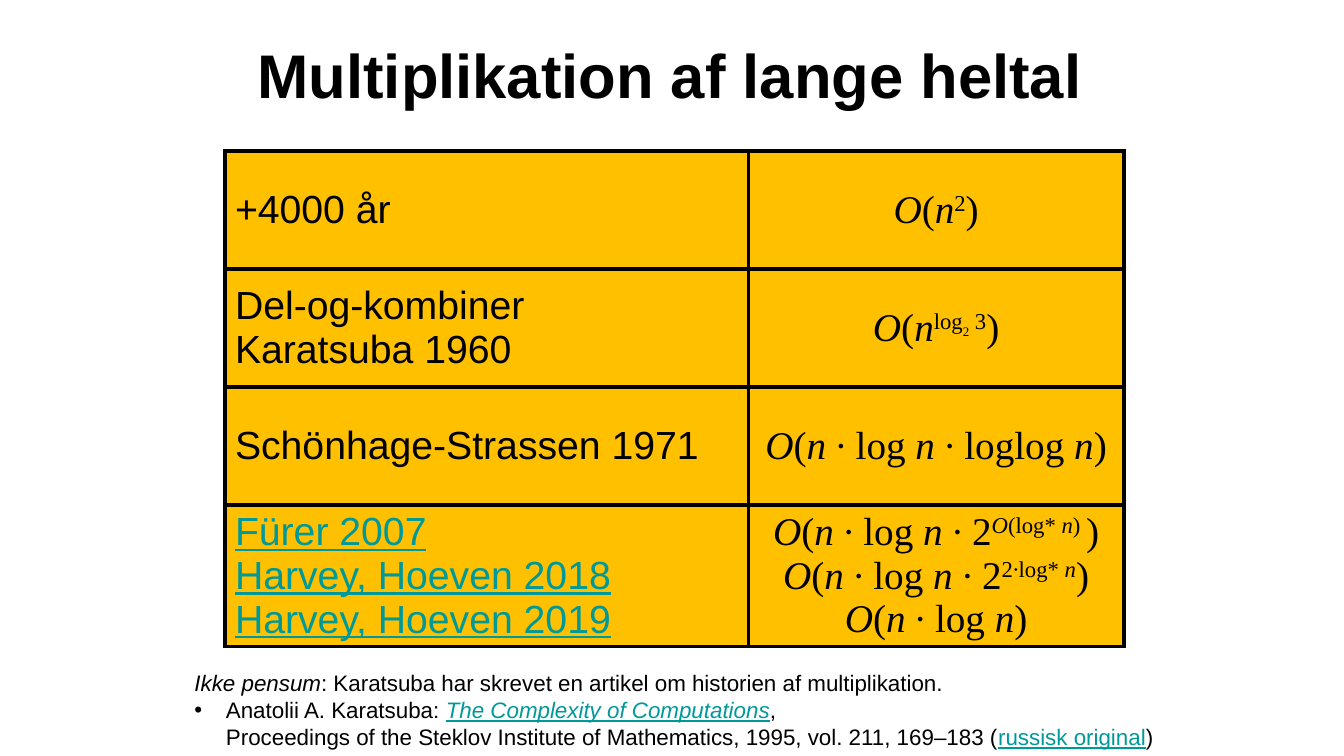
from pptx import Presentation, util as u
from pptx.dml.color import RGBColor
from pptx.enum import text
from pptx.oxml import parse_xml
from pptx.oxml.ns import nsdecls

# Runs are (text, style): i italic, ^ raised, _ small index, u link look, m formula font
TITLE = "Multiplikation af lange heltal"
N_LOG_N = [("O", "mi"), ("(", "m"), ("n ", "mi"), ("∙ log ", "m")]
N_LOG_N_2 = N_LOG_N + [("n ", "mi"), ("∙ 2", "m")]
O_N = [("O", "mi"), ("(", "m"), ("n", "mi")]
END = [(")", "m")]

# Each cell is a list of paragraphs
ROWS = [
    ([[("+4000 år", "")]],
     [O_N + [("2", "m^")] + END]),
    ([[("Del-og-kombiner \nKaratsuba 1960", "")]],
     [O_N + [("log", "m^"), ("2", "m_"), (" 3", "m^")] + END]),
    ([[("Schönhage-Strassen 1971", "")]],
     [N_LOG_N + [("n ", "mi"), ("∙ loglog ", "m"), ("n", "mi")] + END]),
    ([[("Fürer 2007\nHarvey, Hoeven 2018", "u")], [("Harvey, Hoeven 2019", "u")]],
     [N_LOG_N_2 + [("O", "mi^"), ("(log* ", "m^"), ("n", "mi^"), (") ", "m^")] + END,
      N_LOG_N_2 + [("2∙log* ", "m^"), ("n", "mi^")] + END,
      N_LOG_N + [("n", "mi")] + END]),
]
NOTE = [("Ikke pensum", "i"),
        (": Karatsuba har skrevet en artikel om historien af multiplikation.", "")]
REFERENCE = [
    ("Anatolii A. Karatsuba: ", ""), ("The Complexity of Computations", "iu"),
    (", \nProceedings of the Steklov Institute of Mathematics, 1995, vol. 211, 169–183 (", ""),
    ("russisk original", "u"), (")", "")]

THEME = dict(font="Arial", formula="Times New Roman", ink="000000", link="009999",
             cell="FFC000", title=44, body=28, index=16, note=16, border=3)
COL_WIDTHS = (374, 268)
ROW_HEIGHTS = (84.25, 84.25, 84.25, 101)
LEFT, CENTER = text.PP_ALIGN.LEFT, text.PP_ALIGN.CENTER


def write(p, runs, size, align=LEFT, bold=False):
    p.alignment = align
    for words, style in runs:
        for i, line in enumerate(words.split("\n")):
            if i:
                p.add_line_break()
            r = p.add_run()
            r.text = line
            f = r.font
            f.name = THEME["formula" if "m" in style else "font"]
            f.size = u.Pt(THEME["index"] if "_" in style else size)
            f.bold, f.italic, f.underline = bold, "i" in style, "u" in style
            f.color.rgb = RGBColor.from_string(THEME["link" if "u" in style else "ink"])
            if "^" in style or "_" in style:
                f._element.set("baseline", "30000" if "^" in style else "20000")


def write_all(tf, paragraphs, size, align=LEFT):
    for i, runs in enumerate(paragraphs):
        write(tf.add_paragraph() if i else tf.paragraphs[0], runs, size, align)


def add_borders(cell):
    tcPr = cell._tc.get_or_add_tcPr()
    for i, side in enumerate("LRTB"):
        tcPr.insert(i, parse_xml(
            f'<a:ln{side} {nsdecls("a")} w="{u.Pt(THEME["border"])}"><a:solidFill>'
            f'<a:srgbClr val="{THEME["ink"]}"/></a:solidFill></a:ln{side}>'))


def add_bullet(p, indent):
    pPr = p._p.get_or_add_pPr()
    pPr.set("marL", str(u.Pt(indent)))
    pPr.set("indent", str(-u.Pt(indent)))
    pPr.append(parse_xml(f'<a:buFont {nsdecls("a")} typeface="{THEME["font"]}"/>'))
    pPr.append(parse_xml(f'<a:buChar {nsdecls("a")} char="•"/>'))


def add_title(s):
    sp = s.shapes.title
    sp.left, sp.top, sp.width, sp.height = map(u.Pt, (154.8, 8, 648, 90))
    sp.text_frame.vertical_anchor = text.MSO_ANCHOR.MIDDLE
    write(sp.text_frame.paragraphs[0], [(TITLE, "")], THEME["title"], CENTER, bold=True)


def add_runtimes(s):
    tbl = s.shapes.add_table(len(ROWS), len(COL_WIDTHS), u.Pt(160.7), u.Pt(108),
                             u.Pt(sum(COL_WIDTHS)), u.Pt(sum(ROW_HEIGHTS))).table
    tbl.first_row = tbl.horz_banding = False
    for col, width in zip(tbl.columns, COL_WIDTHS):
        col.width = u.Pt(width)
    for y, (row, height) in enumerate(zip(ROWS, ROW_HEIGHTS)):
        tbl.rows[y].height = u.Pt(height)
        for x, (paragraphs, align) in enumerate(zip(row, (LEFT, CENTER))):
            cell = tbl.cell(y, x)
            cell.vertical_anchor = text.MSO_ANCHOR.MIDDLE
            cell.fill.solid()
            cell.fill.fore_color.rgb = RGBColor.from_string(THEME["cell"])
            add_borders(cell)
            write_all(cell.text_frame, paragraphs, THEME["body"], align)


def add_note(s):
    tf = s.shapes.add_textbox(*map(u.Pt, (131.8, 474.5, 708, 65.5))).text_frame
    tf.word_wrap = True
    write_all(tf, [NOTE, REFERENCE], THEME["note"])
    add_bullet(tf.paragraphs[1], 22.5)


def main():
    prs = Presentation()
    prs.slide_width, prs.slide_height = u.Pt(960), u.Pt(540)
    s = prs.slides.add_slide(prs.slide_layouts[5])
    add_title(s)
    add_runtimes(s)
    add_note(s)
    prs.save("out.pptx")


if __name__ == "__main__":
    main()
